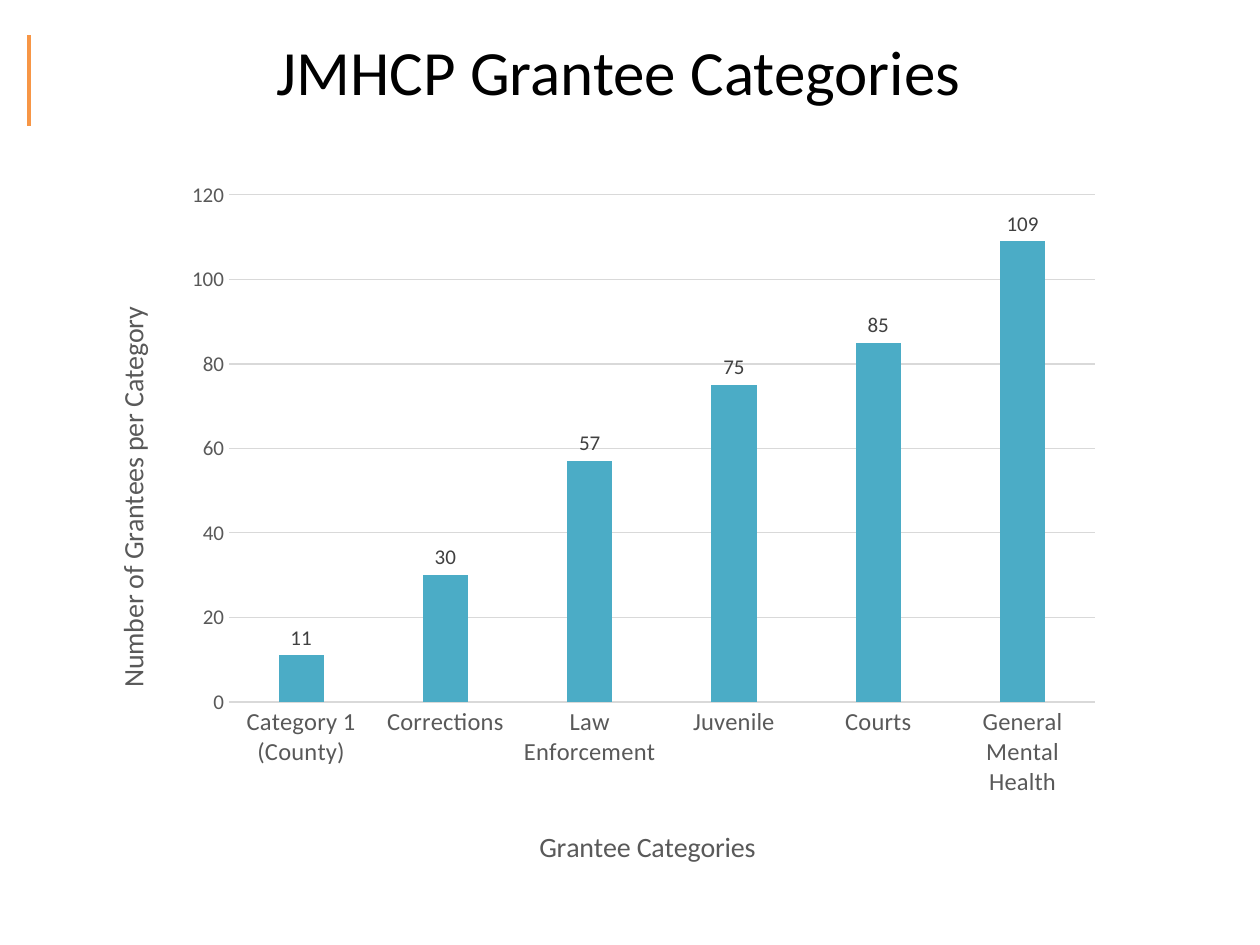
from dataclasses import dataclass

from pptx import Presentation
from pptx.chart.data import CategoryChartData
from pptx.dml.color import RGBColor
from pptx.enum.chart import XL_CHART_TYPE as ChartType
from pptx.enum.chart import XL_LABEL_POSITION as LabelPosition
from pptx.enum.chart import XL_TICK_MARK as TickMark
from pptx.enum.shapes import MSO_CONNECTOR as Connector
from pptx.enum.text import MSO_ANCHOR as Anchor
from pptx.enum.text import PP_ALIGN as Align
from pptx.oxml import parse_xml
from pptx.oxml.ns import nsdecls, qn
from pptx.util import Cm, Pt


@dataclass(frozen=True)
class Theme:
    font: str = "Calibri"
    black: str = "000000"
    accent: str = "F79646"
    bar: str = "4BACC6"
    axis_text: str = "595959"
    label_text: str = "404040"
    grid: str = "D9D9D9"
    title_size: int = 36
    axis_title_size: int = 16
    category_size: int = 14
    value_size: int = 12
    chart_size: int = 10


class SlideBuilder:
    def __init__(self, slide, theme):
        self.slide = slide
        self.theme = theme

    def style_font(self, font, size, color):
        font.name = self.theme.font
        font.size = Pt(size)
        font.bold = False
        font.color.rgb = RGBColor.from_string(color)

    def style_line(self, line, color, width):
        line.color.rgb = RGBColor.from_string(color)
        line.width = Pt(width)

    def title(self, text, left, top, width, height):
        box = self.slide.shapes.title
        box.left, box.top, box.width, box.height = map(Cm, (left, top, width, height))
        frame = box.text_frame
        frame.text = text
        frame.word_wrap = True
        frame.vertical_anchor = Anchor.TOP
        para = frame.paragraphs[0]
        para.alignment = Align.CENTER
        self.style_font(para.font, self.theme.title_size, self.theme.black)

    def line(self, start, end, color, width):
        line = self.slide.shapes.add_connector(
            Connector.STRAIGHT, *map(Cm, (*start, *end)))
        self.style_line(line.line, color, width)
        line._element.spPr.append(parse_xml(f"<a:effectLst {nsdecls('a')}/>"))

    def manual_layout(self, element, **fractions):
        """Place a chart part by fractions of the chart's size."""
        for layout in element.findall(qn("c:layout")):
            element.remove(layout)
        inner = '<c:layoutTarget val="inner"/>' if "w" in fractions else ""
        modes = "".join(f'<c:{key}Mode val="edge"/>' for key in "xy")
        values = "".join(f'<c:{key} val="{value}"/>' for key, value in fractions.items())
        layout = parse_xml(f"<c:layout {nsdecls('c')}><c:manualLayout>"
                           f"{inner}{modes}{values}</c:manualLayout></c:layout>")
        text = element.find(qn("c:tx"))
        element.insert(0 if text is None else 1, layout)

    def axis(self, axis, title, size, rotation, x, y):
        theme = self.theme
        axis.major_tick_mark = axis.minor_tick_mark = TickMark.NONE
        self.style_font(axis.tick_labels.font, size, theme.axis_text)
        frame = axis.axis_title.text_frame
        frame.text = title
        self.style_font(frame.paragraphs[0].font, theme.axis_title_size, theme.axis_text)
        frame._txBody.find(qn("a:bodyPr")).set("rot", str(rotation * 60000))
        self.manual_layout(axis.axis_title._element, x=x, y=y)

    def column_chart(self, counts, left, top, width, height):
        theme = self.theme
        data = CategoryChartData()
        data.categories = list(counts)
        data.add_series("Series 1", list(counts.values()))
        chart = self.slide.shapes.add_chart(
            ChartType.COLUMN_CLUSTERED, *map(Cm, (left, top, width, height)), data).chart
        self.style_font(chart.font, theme.chart_size, theme.black)
        chart.has_legend = False
        chart.has_title = False

        # Axes
        self.axis(chart.category_axis, "Grantee Categories",
                  theme.category_size, 0, x=0.41, y=0.92)
        self.style_line(chart.category_axis.format.line, theme.grid, 0.75)
        values = chart.value_axis
        self.axis(values, "Number of Grantees per Category",
                  theme.value_size, -90, x=0.01, y=0.22)
        values.format.line.fill.background()
        values.minimum_scale, values.maximum_scale, values.major_unit = 0, 120, 20
        self.style_line(values.major_gridlines.format.line, theme.grid, 0.75)

        # Columns and their labels
        plot = chart.plots[0]
        plot.vary_by_categories = False
        plot.gap_width, plot.overlap = 219, -27
        fill = plot.series[0].format.fill
        fill.solid()
        fill.fore_color.rgb = RGBColor.from_string(theme.bar)
        labels = plot.series[0].data_labels
        labels.show_value = True
        labels.position = LabelPosition.OUTSIDE_END
        self.style_font(labels.font, theme.value_size, theme.label_text)
        plot_area = chart._chartSpace.find(qn("c:chart")).find(qn("c:plotArea"))
        self.manual_layout(plot_area, x=0.123, y=0.076, w=0.814, h=0.682)


def main():
    deck = Presentation()
    deck.slide_width, deck.slide_height = Cm(25.4), Cm(19.05)
    theme = Theme()
    page = SlideBuilder(deck.slides.add_slide(deck.slide_layouts[5]), theme)

    # Heading with accent rule
    page.line((0.59, 0.71), (0.59, 2.54), theme.accent, 2.5)
    page.title("JMHCP Grantee Categories", 1.52, 0.53, 21.9, 2.77)

    # Grantees per category
    counts = {
        "Category 1 (County)": 11,
        "Corrections": 30,
        "Law Enforcement": 57,
        "Juvenile": 75,
        "Courts": 85,
        "General Mental Health": 109,
    }
    page.column_chart(counts, 1.98, 2.79, 21.44, 14.99)
    deck.save("out.pptx")


if __name__ == "__main__":
    main()
